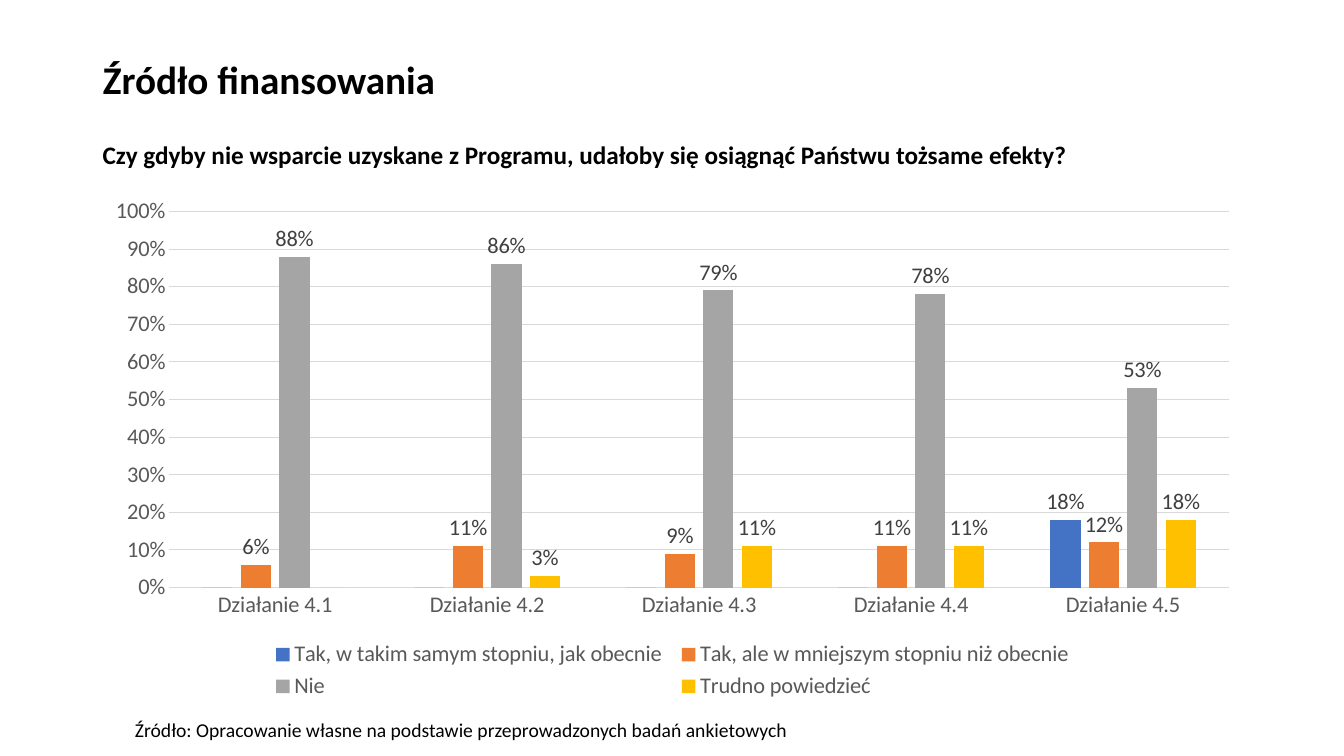
from pptx import Presentation
from pptx.chart.data import CategoryChartData
from pptx.dml.color import RGBColor
from pptx.enum.chart import (XL_CHART_TYPE as ChartType, XL_LABEL_POSITION as LabelPos,
                             XL_LEGEND_POSITION as LegendPos, XL_TICK_MARK as TickMark)
from pptx.enum.text import MSO_ANCHOR as Anchor, MSO_AUTO_SIZE as AutoSize, PP_ALIGN as Align
from pptx.util import Inches, Pt

ACTIONS = [f"Działanie 4.{number}" for number in range(1, 6)]
ANSWERS = [
    ("Tak, w takim samym stopniu, jak obecnie ", "4472C4", (0, 0, 0, 0, 0.18)),
    ("Tak, ale w mniejszym stopniu niż obecnie", "ED7D31", (0.06, 0.11, 0.09, 0.11, 0.12)),
    ("Nie ", "A5A5A5", (0.88, 0.86, 0.79, 0.78, 0.53)),
    ("Trudno powiedzieć ", "FFC000", (0, 0.03, 0.11, 0.11, 0.18)),
]


def rgb(hex_color):
    return RGBColor.from_string(hex_color)


class SurveySlide:
    FONT = "Calibri"
    TEXT, AXIS_TEXT, LABEL_TEXT, GRID = "000000", "595959", "404040", "D9D9D9"
    CHART_SIZE = 16

    def __init__(self, deck):
        self.slide = deck.slides.add_slide(deck.slide_layouts[5])

    def style_font(self, font, size, color, bold=False):
        font.name, font.size, font.bold = self.FONT, Pt(size), bold
        font.color.rgb = rgb(color)

    def style_line(self, line):
        line.color.rgb = rgb(self.GRID)
        line.width = Pt(0.75)

    def fill_frame(self, frame, text, size, bold=False, anchor=Anchor.TOP, align=Align.LEFT,
                   spacing=0.9, before=0, after=0):
        frame.text = text
        frame.word_wrap = True
        frame.auto_size = AutoSize.NONE
        frame.vertical_anchor = anchor
        paragraph = frame.paragraphs[0]
        paragraph.alignment, paragraph.line_spacing = align, spacing
        paragraph.space_before, paragraph.space_after = Pt(before), Pt(after)
        self.style_font(paragraph.runs[0].font, size, self.TEXT, bold)

    def title(self, text, left, top, width, height):
        heading = self.slide.shapes.title
        heading.left, heading.top = Inches(left), Inches(top)
        heading.width, heading.height = Inches(width), Inches(height)
        self.fill_frame(heading.text_frame, text, 28, bold=True, anchor=Anchor.MIDDLE)

    def text(self, text, left, top, width, height, size, **style):
        box = self.slide.shapes.add_textbox(*map(Inches, (left, top, width, height)))
        self.fill_frame(box.text_frame, text, size, **style)

    def column_chart(self, categories, answers, left, top, width, height):
        data = CategoryChartData(number_format="0%")
        data.categories = categories
        for name, _, shares in answers:
            data.add_series(name, shares)
        chart = self.slide.shapes.add_chart(
            ChartType.COLUMN_CLUSTERED, *map(Inches, (left, top, width, height)), data).chart
        self.style_font(chart.font, self.CHART_SIZE, self.TEXT)
        chart.has_title = False
        chart.has_legend = True
        chart.legend.position = LegendPos.BOTTOM
        chart.legend.include_in_layout = False
        self.style_font(chart.legend.font, self.CHART_SIZE, self.AXIS_TEXT)
        self.style_axes(chart)
        self.style_columns(chart.plots[0], answers)

    def style_axes(self, chart):
        for axis in (chart.category_axis, chart.value_axis):
            axis.major_tick_mark = axis.minor_tick_mark = TickMark.NONE
            self.style_font(axis.tick_labels.font, self.CHART_SIZE, self.AXIS_TEXT)
        self.style_line(chart.category_axis.format.line)
        shares = chart.value_axis
        shares.minimum_scale, shares.maximum_scale, shares.major_unit = 0, 1, 0.1
        shares.tick_labels.number_format = "0%"
        shares.tick_labels.number_format_is_linked = False
        shares.format.line.fill.background()
        shares.has_major_gridlines = True
        self.style_line(shares.major_gridlines.format.line)

    def style_columns(self, plot, answers):
        plot.gap_width, plot.overlap = 219, -27
        plot.vary_by_categories = False
        for series, (_, color, _) in zip(plot.series, answers):
            series.format.fill.solid()
            series.format.fill.fore_color.rgb = rgb(color)
            labels = series.data_labels
            labels.show_value = True
            labels.position = LabelPos.OUTSIDE_END
            labels.number_format = "0%;;"  # zero shares stay unlabelled
            labels.number_format_is_linked = False
            self.style_font(labels.font, self.CHART_SIZE, self.LABEL_TEXT)


def main():
    deck = Presentation()
    deck.slide_width, deck.slide_height = Inches(13.33), Inches(7.5)
    survey = SurveySlide(deck)

    # Heading and survey question
    survey.title("Źródło finansowania", 0.92, 0.4, 11.5, 0.83)
    survey.text("Czy gdyby nie wsparcie uzyskane z Programu, udałoby się osiągnąć Państwu "
                "tożsame efekty?", 0.92, 1.29, 11.5, 0.57, 18,
                bold=True, align=Align.JUSTIFY, spacing=1.15, before=4, after=4)

    # Answers by action
    survey.column_chart(ACTIONS, ANSWERS, 0.92, 1.86, 11.5, 5.13)

    # Source note
    survey.text("Źródło: Opracowanie własne na podstawie przeprowadzonych badań ankietowych",
                1.24, 7.1, 11.5, 0.57, 14, before=10)

    deck.save("out.pptx")


if __name__ == "__main__":
    main()
